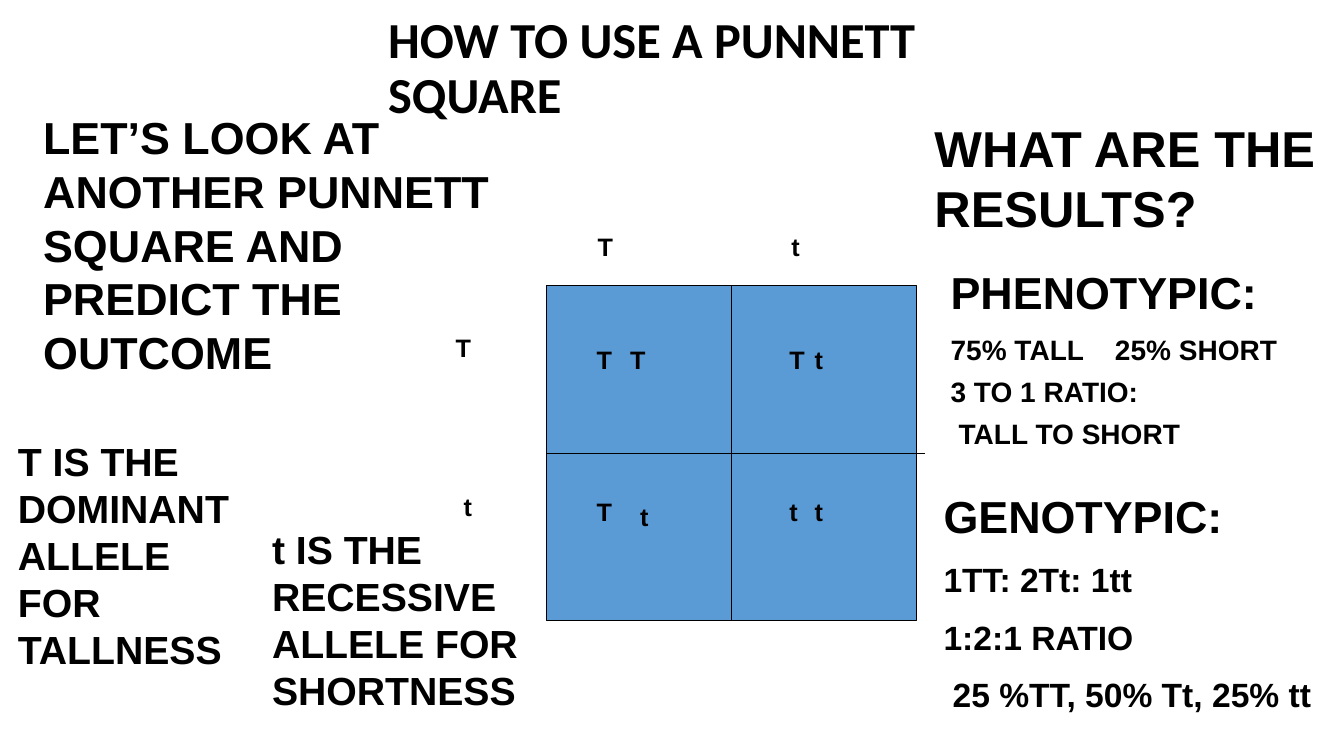
from lxml.etree import SubElement
from pptx import Presentation
from pptx.dml.color import RGBColor
from pptx.enum.shapes import MSO_CONNECTOR, MSO_SHAPE
from pptx.enum.text import MSO_ANCHOR, MSO_AUTO_SIZE, PP_ALIGN
from pptx.oxml.ns import qn
from pptx.util import Inches, Pt

BLACK = RGBColor(0, 0, 0)
BLUE = RGBColor(0x5B, 0x9B, 0xD5)


def style(para, size, font="Arial"):
    """Set the bold black face of a paragraph."""
    for run in para.runs:
        run.font.name = font
        run.font.size = Pt(size)
        run.font.bold = True
        run.font.color.rgb = BLACK


def add_text(slide, box, lines, wrap=True):
    """Add a text box from (text, size, space before) lines."""
    shape = slide.shapes.add_textbox(*map(Inches, box))
    frame = shape.text_frame
    frame.word_wrap = wrap
    frame.auto_size = MSO_AUTO_SIZE.SHAPE_TO_FIT_TEXT
    for i, (text, size, gap) in enumerate(lines):
        para = frame.add_paragraph() if i else frame.paragraphs[0]
        para.text = text
        para.space_before = Pt(gap)
        style(para, size)
    return frame


def add_line(slide, *ends):
    """Add a thin black line between two points."""
    line = slide.shapes.add_connector(MSO_CONNECTOR.STRAIGHT, *map(Inches, ends))
    line.line.color.rgb = BLACK
    line.line.width = Pt(0.75)
    SubElement(line._element.spPr, qn("a:effectLst"))


def indent(para, width):
    """Indent a whole paragraph."""
    para._p.get_or_add_pPr().set("marL", str(Inches(width)))


def add_title(slide, box, text):
    """Place and format the title."""
    title = slide.shapes.title
    title.left, title.top, title.width, title.height = map(Inches, box)
    frame = title.text_frame
    frame.text = text
    frame.word_wrap = True
    frame.auto_size = MSO_AUTO_SIZE.NONE
    frame.vertical_anchor = MSO_ANCHOR.MIDDLE
    para = frame.paragraphs[0]
    para.alignment = PP_ALIGN.LEFT
    para.line_spacing = 0.9
    style(para, 36, "Calibri")


def add_square(slide, box):
    """Draw the Punnett square with its parent and child alleles."""
    x, y, w, h = box
    rect = slide.shapes.add_shape(MSO_SHAPE.RECTANGLE, *map(Inches, box))
    rect.shadow.inherit = False
    rect.fill.solid()
    rect.fill.fore_color.rgb = BLUE
    rect.line.color.rgb = BLACK
    rect.line.width = Pt(0.75)
    add_line(slide, x + w / 2, y, x + w / 2, y + h)
    add_line(slide, x, y + h / 2, x + w + 0.08, y + h / 2)
    add_line(slide, x + w, y + h - 0.25, x + w, y + 0.25)

    heads = [("T", 0.41, -0.58, 1.83), ("t", 2.33, -0.58, 1.33),
             ("T", -1, 0.42, 0.75), ("t", -0.92, 2, 0.42)]
    for text, dx, dy, wide in heads:
        add_text(slide, (x + dx, y + dy, wide, 0.4), [(text, 18, 0)])

    cells = [("TT", 0.33, 0), ("Tt", 0.25, 0), ("Tt", 0.43, 0.05), ("tt", 0.25, 0)]
    for i, (pair, dx, dy) in enumerate(cells):
        row, col = divmod(i, 2)
        left, top = x + 0.4 + 1.91 * col, y + 0.54 + 1.5 * row
        for j, text in enumerate(pair):
            wide = 0.35 if text == "T" else 0.28
            spot = (left + j * dx, top + j * dy, wide, 0.4)
            add_text(slide, spot, [(text, 18, 0)], False)


def add_notes(slide, x, y):
    """Write the prompt and the two allele rules on the left."""
    notes = [
        (0.25, 0, 4.67, 2.79, 32,
         "LET’S LOOK AT ANOTHER PUNNETT SQUARE AND PREDICT THE OUTCOME"),
        (0, 3.25, 2.44, 2.46, 28, "T IS THE DOMINANT ALLELE FOR TALLNESS"),
        (2.52, 4.12, 2.73, 1.99, 28, "t IS THE RECESSIVE ALLELE FOR SHORTNESS"),
    ]
    for dx, dy, w, h, size, text in notes:
        add_text(slide, (x + dx, y + dy, w, h), [(text, size, 0)])


def add_results(slide, x, y):
    """Write the phenotypic and genotypic results on the right."""
    add_text(slide, (x, y, 4.17, 1.31), [("WHAT ARE THE RESULTS?", 36, 0)])
    pheno = add_text(slide, (x + 0.16, y + 1.47, 3.48, 1.99), [
        ("PHENOTYPIC:", 32, 0), ("75% TALL\t25% SHORT", 20, 10),
        ("3 TO 1 RATIO:", 20, 6), ("TALL TO SHORT", 20, 6)])
    tabs = SubElement(pheno.paragraphs[1]._p.get_or_add_pPr(), qn("a:tabLst"))
    SubElement(tabs, qn("a:tab"), pos=str(Inches(1.63)), algn="l")
    indent(pheno.paragraphs[3], 0.08)
    geno = add_text(slide, (x + 0.09, y + 3.69, 3.86, 2.46), [
        ("GENOTYPIC:", 32, 0), ("1TT: 2Tt: 1tt", 24, 12),
        ("1:2:1 RATIO", 24, 12), ("25 %TT, 50% Tt, 25% tt", 24, 12)])
    indent(geno.paragraphs[3], 0.09)


def main():
    """Build and save the slide."""
    deck = Presentation()
    deck.slide_width, deck.slide_height = Inches(13.33), Inches(7.5)
    slide = deck.slides.add_slide(deck.slide_layouts[5])
    add_title(slide, (3.75, 0.25, 7.08, 0.88), "HOW TO USE A PUNNETT SQUARE")
    add_square(slide, (5.42, 2.83, 3.67, 3.33))
    add_results(slide, 9.17, 1.11)
    add_notes(slide, 0.08, 1.04)
    deck.save("out.pptx")


if __name__ == "__main__":
    main()
